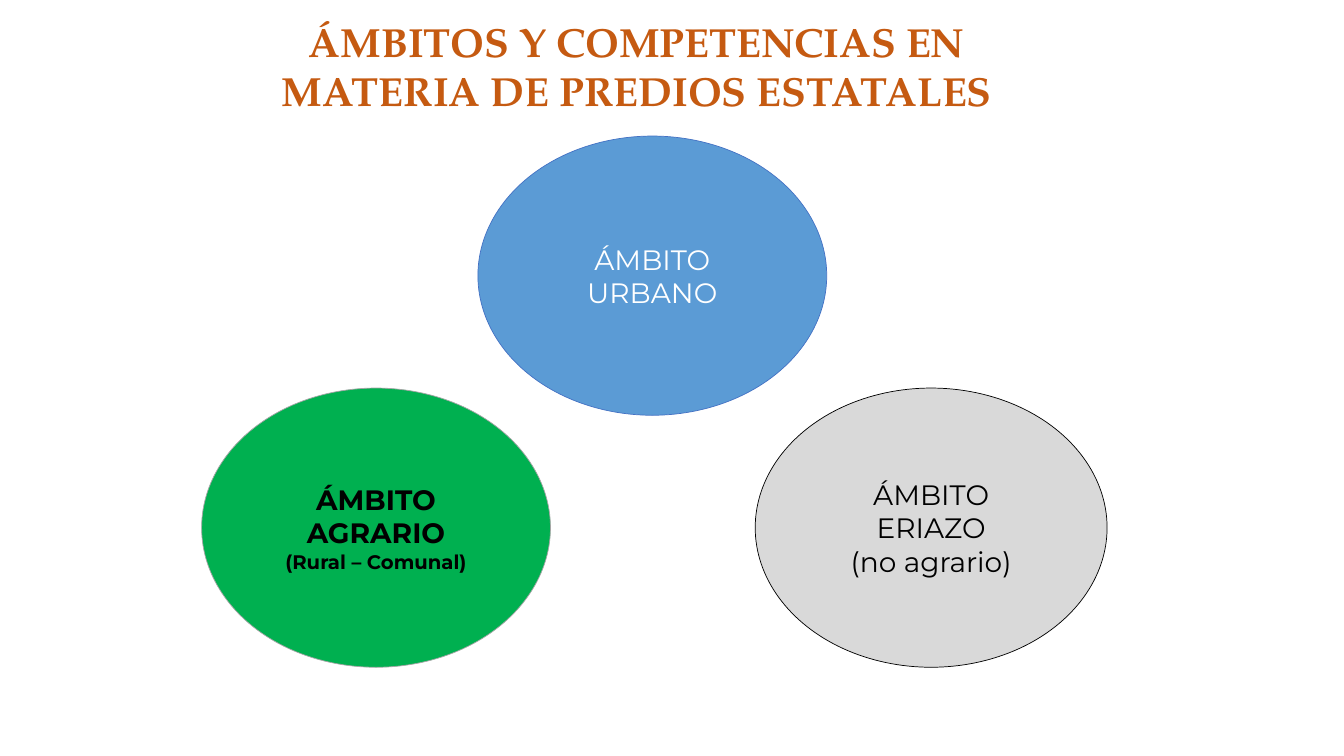
from dataclasses import dataclass

from pptx import Presentation
from pptx.dml.color import RGBColor
from pptx.enum.shapes import MSO_SHAPE
from pptx.enum.text import MSO_ANCHOR, MSO_AUTO_SIZE, PP_ALIGN
from pptx.util import Inches, Pt

ELLIPSE = MSO_SHAPE.OVAL
MIDDLE = MSO_ANCHOR.MIDDLE
CENTER = PP_ALIGN.CENTER
GROW = MSO_AUTO_SIZE.SHAPE_TO_FIT_TEXT

COLORS = {
    "orange": "C55A11",
    "green": "00B050",
    "silver": "A5A5A5",
    "sky": "5B9BD5",
    "blue": "4472C4",
    "gray": "D9D9D9",
    "black": "000000",
    "white": "FFFFFF",
}
BODY_FONT = "Montserrat"
TITLE_FONT = "TeX Gyre Pagella"
ELLIPSE_HEIGHT = 2.77
TOP_ROW, BOTTOM_ROW = 1.35, 3.85


@dataclass
class Line:
    text: str
    size: float = 20


@dataclass
class Scope:
    left: float
    top: float
    width: float
    fill: str
    outline: str
    text_color: str
    lines: list[Line]
    bold: bool = False


SCOPES = [
    Scope(2, BOTTOM_ROW, 3.46, "green", "silver", "black",
          [Line("ÁMBITO AGRARIO"), Line("(Rural – Comunal)", 14)], bold=True),
    Scope(4.74, TOP_ROW, 3.46, "sky", "blue", "white", [Line("ÁMBITO URBANO")]),
    Scope(7.49, BOTTOM_ROW, 3.49, "gray", "black", "black",
          [Line("ÁMBITO ERIAZO"), Line("(no agrario)")]),
]


def color(name: str) -> RGBColor:
    return RGBColor.from_string(COLORS[name])


def write_lines(frame, lines: list[Line], font: str, text_color: str, bold: bool) -> None:
    frame.word_wrap = True
    for index, line in enumerate(lines):
        para = frame.paragraphs[0] if index == 0 else frame.add_paragraph()
        para.alignment = CENTER
        span = para.add_run()
        span.text = line.text
        formats = {"name": font, "size": Pt(line.size), "bold": bold}
        for attribute, value in formats.items():
            setattr(span.font, attribute, value)
        span.font.color.rgb = color(text_color)


def draw_scope(page, scope: Scope) -> None:
    ellipse = page.shapes.add_shape(
        ELLIPSE, Inches(scope.left), Inches(scope.top),
        Inches(scope.width), Inches(ELLIPSE_HEIGHT))
    ellipse.shadow.inherit = False
    ellipse.fill.solid()
    ellipse.fill.fore_color.rgb = color(scope.fill)
    ellipse.line.color.rgb = color(scope.outline)
    ellipse.line.width = Pt(0.5)
    ellipse.text_frame.vertical_anchor = MIDDLE
    write_lines(ellipse.text_frame, scope.lines, BODY_FONT, scope.text_color, scope.bold)


def draw_title(page) -> None:
    box = page.shapes.add_textbox(Inches(2), Inches(0.12), Inches(8.64), Inches(1.08))
    title = Line("ÁMBITOS Y COMPETENCIAS EN MATERIA DE PREDIOS ESTATALES", 29)
    write_lines(box.text_frame, [title], TITLE_FONT, "orange", True)
    box.text_frame.auto_size = GROW


def main() -> None:
    deck = Presentation()
    deck.slide_width = Inches(13.33)
    deck.slide_height = Inches(7.5)
    page = deck.slides.add_slide(deck.slide_layouts[6])

    # Three scopes of state property
    for scope in SCOPES:
        draw_scope(page, scope)

    # Heading
    draw_title(page)

    deck.save("out.pptx")


if __name__ == "__main__":
    main()
